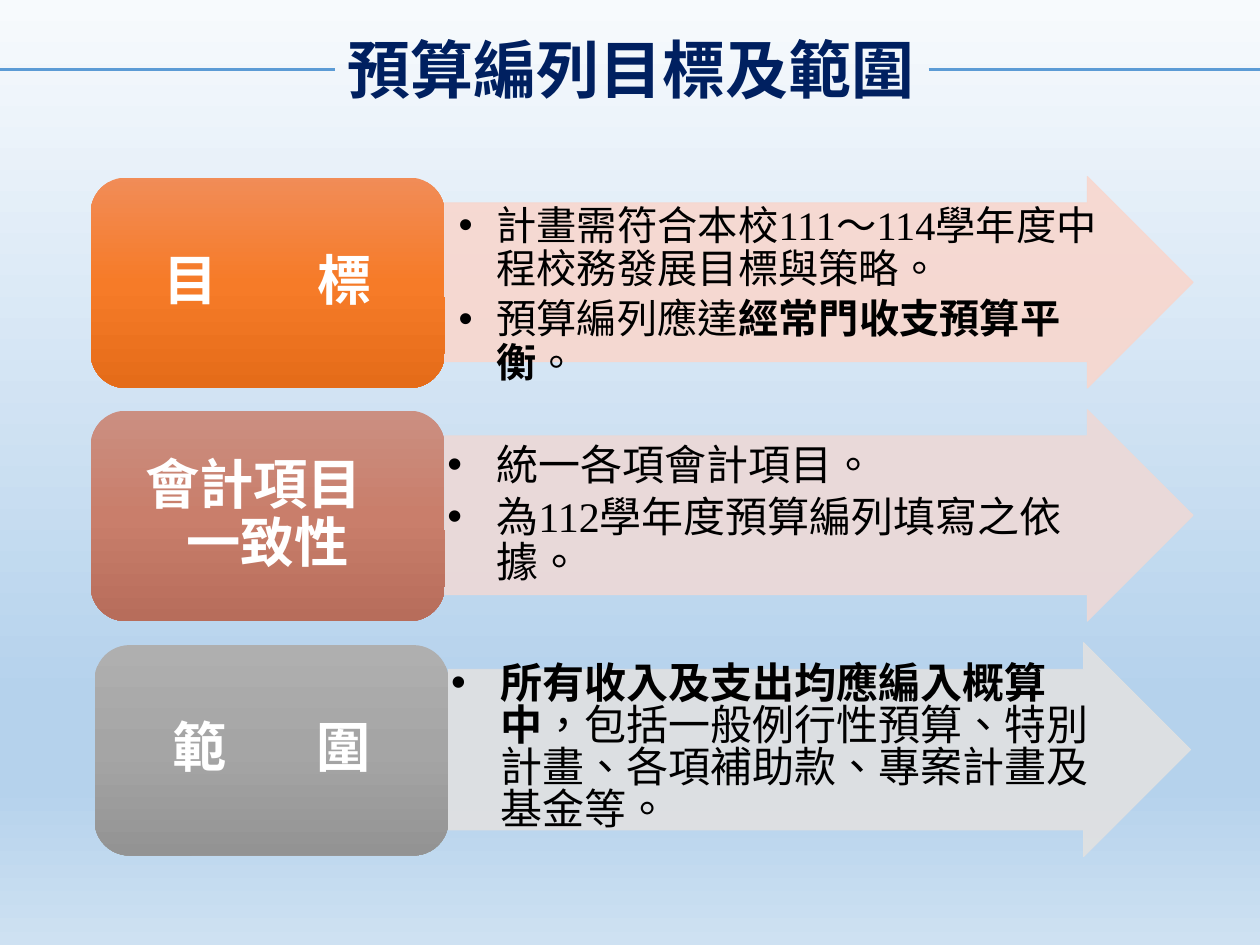
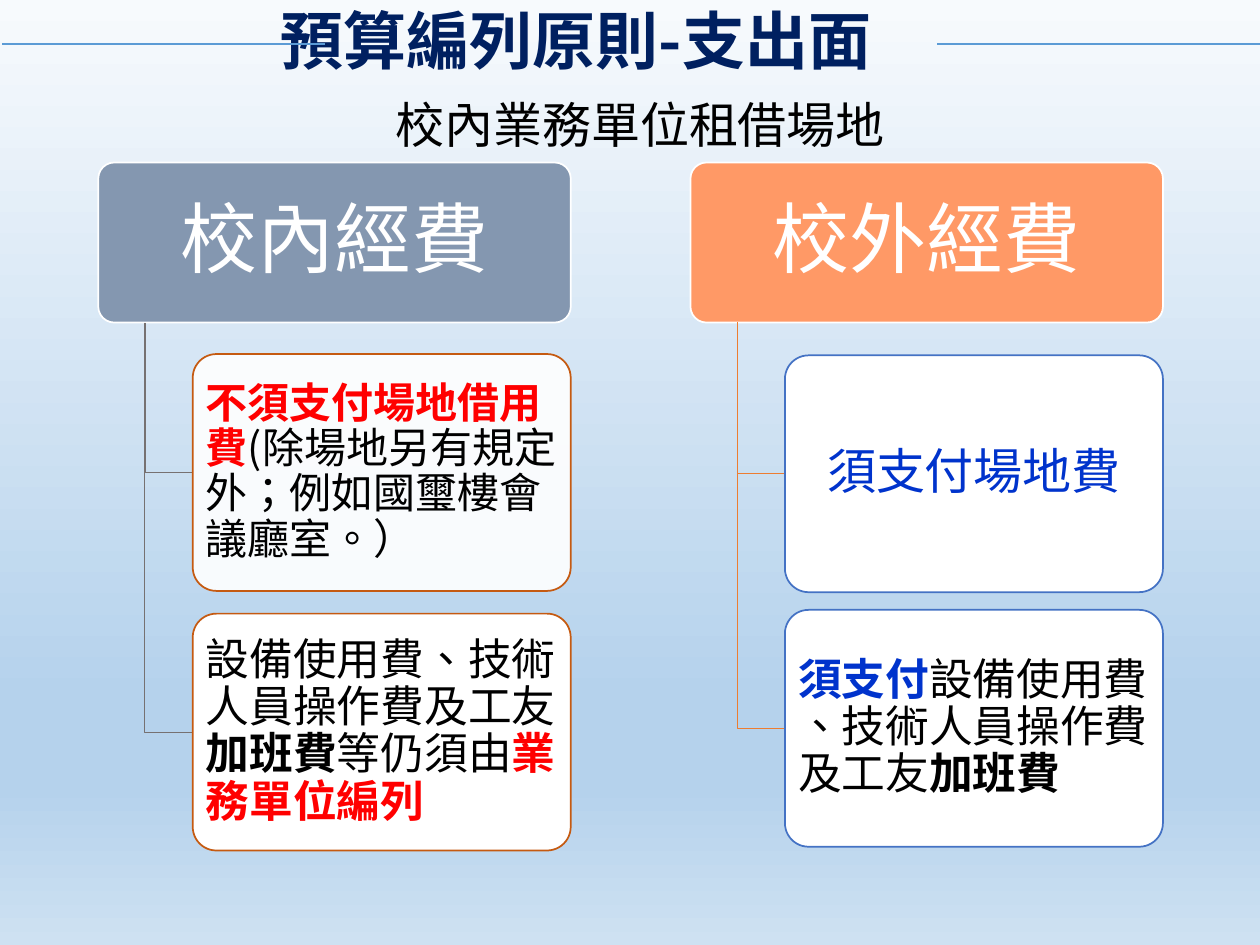
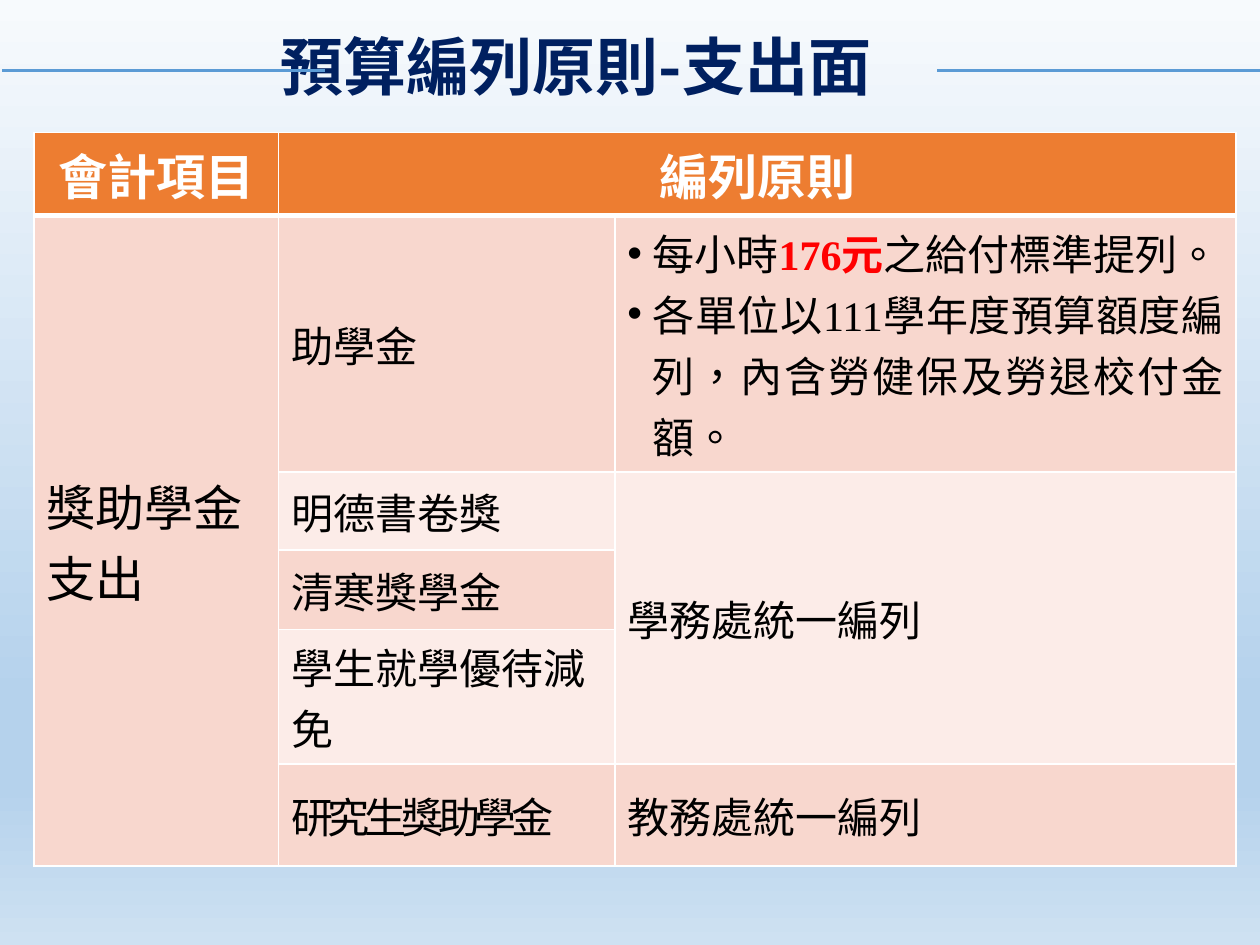
from dataclasses import dataclass

from lxml.etree import SubElement
from pptx import Presentation
from pptx.dml.color import RGBColor
from pptx.enum.shapes import MSO_CONNECTOR, MSO_SHAPE
from pptx.enum.text import MSO_ANCHOR as ANCHOR, MSO_AUTO_SIZE as AUTO, PP_ALIGN as ALIGN
from pptx.oxml.ns import qn
from pptx.util import Pt

PX = 9144  # EMU per px, 100 px to the inch


@dataclass(frozen=True)
class Theme:
    cjk: str = "Noto Sans CJK SC"
    serif: str = "Times New Roman"
    sans: str = "Arial"
    language: str = "zh-TW"
    background: tuple = ((0, "F7FAFD"), (74, "B5D2EC"), (83, "B5D2EC"), (100, "CEE1F2"))
    navy: str = "002060"
    rule: str = "5B9BD5"
    white: str = "FFFFFF"
    black: str = "000000"
    red: str = "FF0000"
    blue: str = "0033CC"
    orange: str = "ED7D31"
    rust: str = "C55A11"
    gray: str = "767171"
    royal: str = "4472C4"
    slate: str = "8497B0"
    peach: str = "FF9966"
    band_dark: str = "F8D7CE"
    band_light: str = "FCECE8"
    title: int = 36
    header: int = 44
    label: int = 31
    large: int = 28
    body: int = 24
    card: int = 25


THEME = Theme()
BOLD = {"bold": True}
RED_BOLD = {"bold": True, "color": THEME.red}
BLUE_BOLD = {"bold": True, "color": THEME.blue}
SERIF = {"latin": THEME.serif}
LINE_BREAK = ("\n", {})


# ---- Shared helpers ----
def px(*lengths):
    return [length * PX for length in lengths]


def set_attributes(target, values):
    for name, value in values.items():
        setattr(target, name, value)


def set_margins(target, left, top, right, bottom):
    names = ("margin_left", "margin_top", "margin_right", "margin_bottom")
    set_attributes(target, dict(zip(names, px(left, top, right, bottom))))


def set_gradient(fill, element, stops):
    fill.gradient()
    fill.gradient_angle = 270
    stop_list = element.find(".//" + qn("a:gsLst"))
    stop_list.clear()
    for position, color in stops:
        stop = SubElement(stop_list, qn("a:gs"), pos=str(position * 1000))
        SubElement(stop, qn("a:srgbClr"), val=color)


def set_solid(fill, color):
    fill.solid()
    fill.fore_color.rgb = RGBColor.from_string(color)


def set_line(line, color, width):
    set_solid(line.fill, color)
    line.width = Pt(width)


def set_alpha(element, percent):
    for color in element.spPr.iter(qn("a:srgbClr")):
        SubElement(color, qn("a:alpha"), val=str(percent * 1000))


def add_run(paragraph, text, size, color, latin=THEME.cjk, bold=False, spacing=0):
    run = paragraph.add_run()
    run.text = text
    set_attributes(run.font, {"size": Pt(size), "bold": bold, "name": latin})
    run.font.color.rgb = RGBColor.from_string(color)
    properties = run.font._element
    properties.set("lang", THEME.language)
    SubElement(properties, qn("a:ea"), typeface=THEME.cjk)
    if spacing:
        properties.set("spc", str(spacing * 100))


def add_bullet(paragraph, indent, hanging):
    properties = paragraph._p.get_or_add_pPr()
    properties.set("marL", str(indent * PX))
    properties.set("indent", str(-hanging * PX))
    SubElement(properties, qn("a:buFont"), typeface=THEME.sans)
    SubElement(properties, qn("a:buChar"), char="•")


def write_text(frame, paragraphs, base, layout=None, bullet=None, overhang=True):
    """Each paragraph is a string or a list of (text, format changes)."""
    for number, runs in enumerate(paragraphs):
        paragraph = frame.add_paragraph() if number else frame.paragraphs[0]
        set_attributes(paragraph, layout or {})
        if bullet:
            add_bullet(paragraph, *bullet)
        if not overhang:
            paragraph._p.get_or_add_pPr().set("hangingPunct", "0")
        for run in [(runs, {})] if isinstance(runs, str) else runs:
            if run == LINE_BREAK:
                paragraph.add_line_break()
            else:
                add_run(paragraph, run[0], **{**base, **run[1]})


def add_text_box(slide, box, paragraphs, base, layout=None, bullet=None, overhang=True,
                 margins=(10, 5, 10, 5), **frame_format):
    frame = slide.shapes.add_textbox(*px(*box)).text_frame
    set_attributes(frame, {"word_wrap": True, **frame_format})
    set_margins(frame, *margins)
    write_text(frame, paragraphs, base, layout, bullet, overhang)


def add_shape(slide, kind, box, adjustments=()):
    shape = slide.shapes.add_shape(kind, *px(*box))
    shape.shadow.inherit = False
    for number, value in enumerate(adjustments):
        shape.adjustments[number] = value
    return shape


def fill_shape_text(shape, paragraphs, base, margins, align=ALIGN.CENTER):
    frame = shape.text_frame
    set_attributes(frame, {"word_wrap": True, "vertical_anchor": ANCHOR.MIDDLE})
    set_margins(frame, *margins)
    write_text(frame, paragraphs, base, {"alignment": align, "line_spacing": 0.9})


def add_title(slide, text, box, rules, margin_left=10):
    left, top, width, rule_y = box
    base = {"size": THEME.title, "color": THEME.navy, "bold": True}
    add_text_box(slide, (left, top, width, 71), [text], base,
                 margins=(margin_left, 5, 10, 5), auto_size=AUTO.SHAPE_TO_FIT_TEXT)
    for start, end in rules:
        rule = slide.shapes.add_connector(
            MSO_CONNECTOR.STRAIGHT, *px(start, rule_y, end, rule_y))
        set_line(rule.line, THEME.rule, 1.5)
        SubElement(rule._element.spPr, qn("a:effectLst"))


def add_spending_title(slide, top):
    add_title(slide, "預算編列原則-支出面", (178, top, 576, top + 39),
              ((2, 258), (744, 1000)), margin_left=45)


# ---- Slide 1: goals and scope ----
def add_goal_band(slide, box, label, stops, arrow_color, points, text_format):
    left, top, width, height = box
    label_width, label_height = 281, 167
    arrow_left, arrow_top = left + label_width, top - (height - label_height + 1) // 2
    arrow_width = width - label_width

    arrow = add_shape(slide, MSO_SHAPE.RIGHT_ARROW,
                      (arrow_left, arrow_top, arrow_width, height), (0.75, 0.5))
    set_solid(arrow.fill, arrow_color)
    set_line(arrow.line, arrow_color, 0.5)
    set_alpha(arrow._element, 90)
    add_text_box(slide, (arrow_left, arrow_top + height // 8, arrow_width - 63, height * 3 // 4),
                 points, **text_format)

    card = add_shape(slide, MSO_SHAPE.ROUNDED_RECTANGLE, (left, top, label_width, label_height))
    set_gradient(card.fill, card._element, stops)
    card.line.fill.background()
    base = {"size": THEME.label, "color": THEME.white, "bold": True}
    fill_shape_text(card, [label], base, (13, 6, 13, 6))


def point_format(size, hanging, line_spacing=0.9, anchor=ANCHOR.MIDDLE, right=0):
    return {
        "base": {"size": size, "color": THEME.black},
        "layout": {"line_spacing": line_spacing, "space_after": Pt(4)},
        "bullet": (39, hanging),
        "overhang": False,
        "margins": (2, 2, right, 2),
        "vertical_anchor": anchor,
    }


def build_goals(slide):
    add_goal_band(
        slide, (72, 141, 875, 168), [("目 ", {"spacing": 25}), ("標", {})],
        ((0, "F18C57"), (50, "F67B28"), (100, "E56C19")), THEME.band_dark,
        [[("計畫需符合本校", {}), ("111～114", SERIF), ("學年度中程校務發展目標與策略。", {})],
         [("預算編列應達", {}), ("經常門收支預算平衡", BOLD), ("。", {})]],
        point_format(23, 30, anchor=ANCHOR.TOP, right=2))
    add_goal_band(
        slide, (72, 326, 875, 168),
        [("會計項", {}), ("目", {"spacing": 16}), LINE_BREAK, ("一致性", {})],
        ((0, "CB8F81"), (50, "C97E6B"), (100, "B76D5B")), "EDD9D7",
        ["統一各項會計項目。",
         [("為", {}), ("112", SERIF), ("學年度預算編列填寫之依據。", {})]],
        point_format(THEME.body, 39))
    add_goal_band(
        slide, (75, 512, 870, 170), [("範 ", {"spacing": 22}), ("圍", {})],
        ((0, "AFAFAF"), (50, "A5A5A5"), (100, "939393")), "E1E1E1",
        [[("所有收入及支出均應編入概算中", BOLD),
          ("，包括一般例行性預算、特別計畫、各項補助款、專案計畫及基金等。", {})]],
        point_format(THEME.body, 39, line_spacing=Pt(24)))
    add_title(slide, "預算編列目標及範圍", (266, 19, 489, 55), ((0, 266), (737, 1000)))


# ---- Slide 2: venue costs ----
def add_branch(slide, box, header, header_color, card_line, link_color, cards):
    left, top, width, header_height = box
    head = add_shape(slide, MSO_SHAPE.ROUNDED_RECTANGLE, box, (0.1,))
    set_solid(head.fill, header_color)
    set_line(head.line, THEME.white, 1)
    fill_shape_text(head, [header], {"size": THEME.header, "color": THEME.white}, (9, 6, 9, 6))

    trunk_x, trunk_top = left + 37, top + header_height
    card_left, card_width, card_height = left + 75, 300, 188
    for offset, link_width, alpha, size, color, align, paragraphs in cards:
        card_top = top + offset
        middle = card_top + card_height // 2
        builder = slide.shapes.build_freeform(trunk_x, trunk_top, scale=PX)
        builder.add_line_segments([(trunk_x, middle), (card_left, middle)], close=False)
        link = builder.convert_to_shape()
        link.shadow.inherit = False
        link.fill.background()
        set_line(link.line, link_color, link_width)

        card = add_shape(slide, MSO_SHAPE.ROUNDED_RECTANGLE,
                         (card_left, card_top, card_width, card_height), (0.1,))
        set_solid(card.fill, THEME.white)
        set_alpha(card._element, alpha)
        set_line(card.line, card_line, 1)
        fill_shape_text(card, paragraphs, {"size": size, "color": color}, (5, 3, 5, 3), align)


def build_venue_costs(slide):
    add_branch(
        slide, (78, 129, 375, 127), "校內經費", THEME.slate, THEME.rust, THEME.gray,
        [(152, 1, 90, THEME.body, THEME.black, ALIGN.LEFT,
          [[("不須支付場地借用費", RED_BOLD), ("(除場地另有規定外；例如國璽樓會議廳室。）", {})]]),
         (358, 0.5, 100, THEME.card, THEME.black, ALIGN.LEFT,
          [[("設備使用費、技術人員操作費及工友", {}), ("加班費", BOLD),
            ("等仍須由", {}), ("業務單位編列", RED_BOLD)]])])
    add_branch(
        slide, (548, 129, 375, 127), "校外經費", THEME.peach, THEME.royal, THEME.orange,
        [(153, 0.5, 100, THEME.large, THEME.blue, ALIGN.CENTER, ["須支付場地費"]),
         (355, 0.5, 100, THEME.card, THEME.black, ALIGN.LEFT,
          [[("須支付", BLUE_BOLD), ("設備使用費", {})],
           [("、技術人員操作費及工友", {}), ("加班費", BOLD)]])])
    add_text_box(slide, (254, 69, 508, 58), ["校內業務單位租借場地"],
                 {"size": THEME.large, "color": THEME.black, "latin": THEME.sans},
                 {"alignment": ALIGN.CENTER}, word_wrap=False, vertical_anchor=ANCHOR.MIDDLE)
    add_spending_title(slide, -4)


# ---- Slide 3: scholarship table ----
def set_borders(cell, bottom):
    properties = cell._tc.get_or_add_tcPr()
    for number, (side, width) in enumerate((("L", 1), ("R", 1), ("T", 1), ("B", bottom))):
        line = properties.makeelement(qn(f"a:ln{side}"), {"w": str(Pt(width))})
        fill = SubElement(line, qn("a:solidFill"))
        SubElement(fill, qn("a:srgbClr"), val=THEME.white)
        properties.insert(number, line)


def add_rules_table(slide, box, columns, rows, spans, entries):
    table = slide.shapes.add_table(len(rows), len(columns), *px(*box)).table
    set_attributes(table, {"first_row": False, "horz_banding": False})
    for column, width in zip(table.columns, columns):
        column.width = width * PX
    for row, height in zip(table.rows, rows):
        row.height = height * PX
    for first, last in spans:
        table.cell(*first).merge(table.cell(*last))

    for row in range(len(rows)):
        for column in range(len(columns)):
            cell = table.cell(row, column)
            band = THEME.band_dark if row % 2 or column == 0 else THEME.band_light
            set_solid(cell.fill, band if row else THEME.orange)
            set_borders(cell, 1 if row else 3)
            set_margins(cell, 10, 5, 10, 5)

    for (row, column), paragraphs in entries.items():
        cell = table.cell(row, column)
        header = row == 0
        cell.vertical_anchor = ANCHOR.TOP if header else ANCHOR.MIDDLE
        base = {"size": THEME.large if header or column == 0 else THEME.body,
                "color": THEME.white if header else THEME.black,
                "latin": THEME.serif, "bold": header}
        bulleted = len(paragraphs) > 1
        write_text(cell.text_frame, paragraphs, base,
                   {"alignment": ALIGN.CENTER if header else ALIGN.LEFT},
                   (20, 20) if bulleted else None)
        if bulleted:
            cell.text_frame.paragraphs[-1].alignment = ALIGN.JUSTIFY


def build_scholarships(slide):
    add_rules_table(
        slide, (27, 105, 954, 507), (194, 267, 493), (63, 188, 62, 63, 50, 81),
        (((0, 1), (0, 2)), ((1, 0), (5, 0)), ((2, 2), (4, 2))),
        {(0, 0): ["會計項目"],
         (0, 1): ["編列原則"],
         (1, 0): ["獎助學金支出"],
         (1, 1): ["助學金"],
         (1, 2): [[("每小時", {}), ("176元", RED_BOLD), ("之給付標準提列。", {})],
                  "各單位以111學年度預算額度編列，內含勞健保及勞退校付金額。"],
         (2, 1): ["明德書卷獎"],
         (2, 2): ["學務處統一編列"],
         (3, 1): ["清寒獎學金"],
         (4, 1): ["學生就學優待減免"],
         (5, 1): [[("研究生獎助學金", {"spacing": -3})]],
         (5, 2): ["教務處統一編列"]})
    add_spending_title(slide, 17)


def main():
    presentation = Presentation()
    set_attributes(presentation, {"slide_width": 1000 * PX, "slide_height": 750 * PX})
    master = presentation.slide_master
    set_gradient(master.background.fill, master.element, THEME.background)
    for build in (build_goals, build_venue_costs, build_scholarships):
        build(presentation.slides.add_slide(presentation.slide_layouts[6]))
    presentation.save("out.pptx")


if __name__ == "__main__":
    main()
